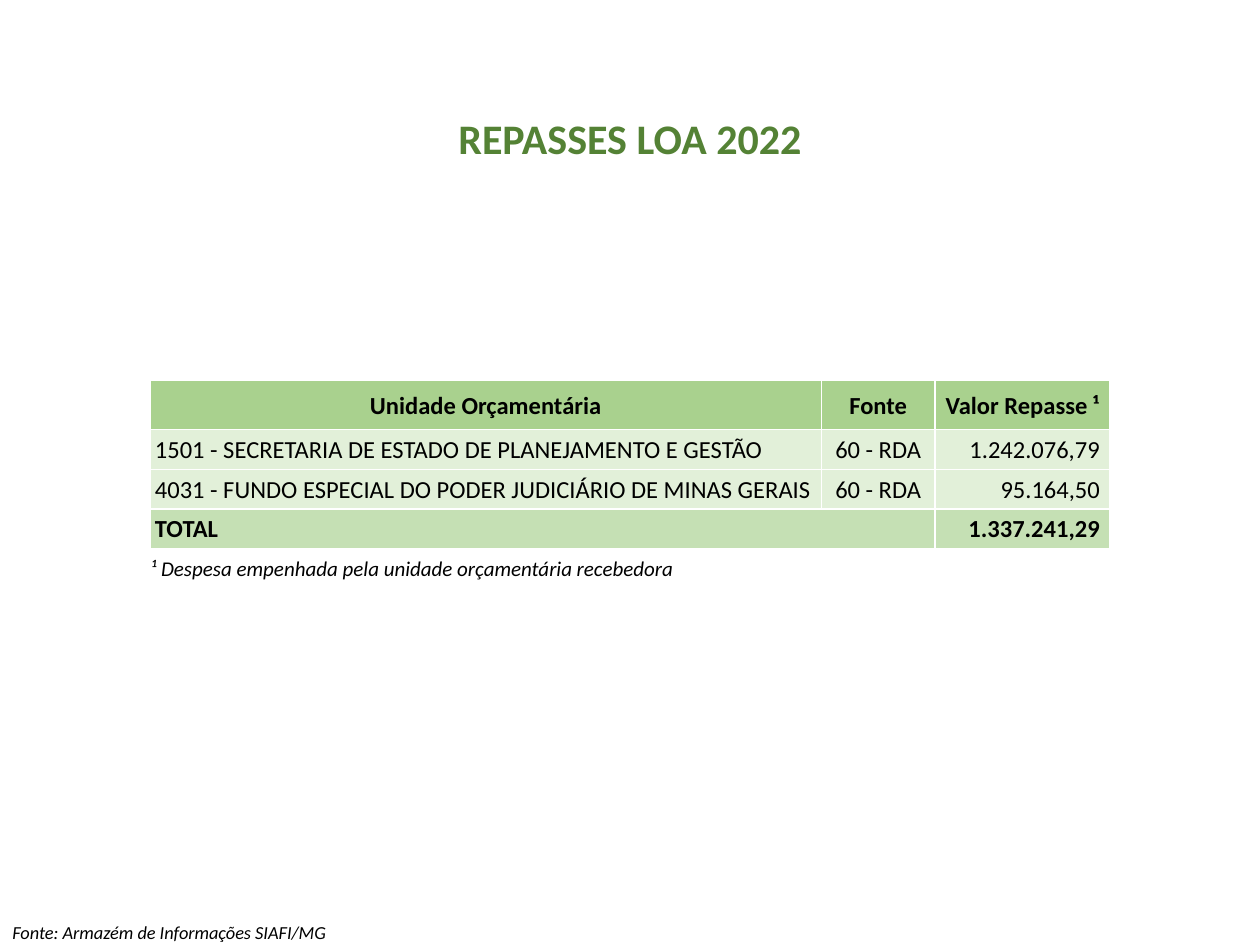
from lxml import etree
from pptx import Presentation
from pptx.dml.color import RGBColor
from pptx.enum.text import MSO_ANCHOR, PP_ALIGN
from pptx.oxml.ns import qn
from pptx.util import Inches, Pt

LEFT, CENTER, RIGHT = PP_ALIGN.LEFT, PP_ALIGN.CENTER, PP_ALIGN.RIGHT


def style(p, size, color="000000", bold=False, italic=False, align=LEFT):
    p.alignment = align
    f = p.font
    f.name, f.size, f.bold, f.italic = "Calibri", Pt(size), bold, italic
    f.color.rgb = RGBColor.from_string(color)


def add_borders(cell, color="FFFFFF", width=1):
    tcPr = cell._tc.get_or_add_tcPr()
    for i, side in enumerate(("lnL", "lnR", "lnT", "lnB")):
        ln = etree.Element(qn(f"a:{side}"), w=str(Pt(width)))
        fill = etree.SubElement(ln, qn("a:solidFill"))
        etree.SubElement(fill, qn("a:srgbClr"), val=color)
        tcPr.insert(i, ln)


prs = Presentation()
prs.slide_width, prs.slide_height = Inches(10), Inches(7.5)
s = prs.slides.add_slide(prs.slide_layouts[5])

# Title
title = s.shapes.title
title.left, title.top = Inches(0.5), Inches(0.72)
title.width, title.height = Inches(9), Inches(0.79)
tf = title.text_frame
tf.text = "REPASSES LOA 2022"
tf.vertical_anchor = MSO_ANCHOR.MIDDLE
tf.paragraphs[0].line_spacing = 0.9
style(tf.paragraphs[0], 24, "548235", bold=True, align=CENTER)

# Transfers table
rows = [
    ("Unidade Orçamentária", "Fonte", "Valor Repasse ¹"),
    ("1501 - SECRETARIA DE ESTADO DE PLANEJAMENTO E GESTÃO", "60 - RDA", "1.242.076,79"),
    ("4031 - FUNDO ESPECIAL DO PODER JUDICIÁRIO DE MINAS GERAIS", "60 - RDA", "95.164,50"),
    ("TOTAL", "", "1.337.241,29"),
    ("¹ Despesa empenhada pela unidade orçamentária recebedora", "", ""),
]
fills = ["A9D18E", "E2F0D9", "E2F0D9", "C5E0B4", "FFFFFF"]
HEADER, TOTAL, NOTE = 0, 3, 4

table = s.shapes.add_table(5, 3, Inches(1.19), Inches(3.02), Inches(7.62), Inches(1.65)).table
for col, width in zip(table.columns, (5.33, 0.9, 1.39)):
    col.width = Inches(width)
for r, row in enumerate(rows):
    table.rows[r].height = Inches(0.39 if r == HEADER else 0.315)
    for c, text in enumerate(row):
        cell = table.cell(r, c)
        cell.text = text
        cell.vertical_anchor = MSO_ANCHOR.MIDDLE
        cell.margin_left = Inches(0.04 if c == 0 and HEADER < r < NOTE else 0.01)
        cell.margin_right = Inches(0.08 if c == 2 and r != HEADER else 0.01)
        cell.margin_top, cell.margin_bottom = Inches(0.01), 0
        cell.fill.solid()
        cell.fill.fore_color.rgb = RGBColor.from_string(fills[r])
        add_borders(cell)
        align = CENTER if r == HEADER else (LEFT, CENTER, RIGHT)[c]
        style(cell.text_frame.paragraphs[0], 12 if r == NOTE else 14,
              bold=r in (HEADER, TOTAL), italic=r == NOTE, align=align)
for r in (TOTAL, NOTE):
    table.cell(r, 0).merge(table.cell(r, 1))

# Source line
sp = s.shapes.add_textbox(0, Inches(7.3), Inches(7.95), Inches(0.2))
tf = sp.text_frame
tf.word_wrap = True
tf.vertical_anchor = MSO_ANCHOR.MIDDLE
tf.margin_top = tf.margin_bottom = 0
tf.text = "Fonte: Armazém de Informações SIAFI/MG"
style(tf.paragraphs[0], 10.5, italic=True)

prs.save("out.pptx")
